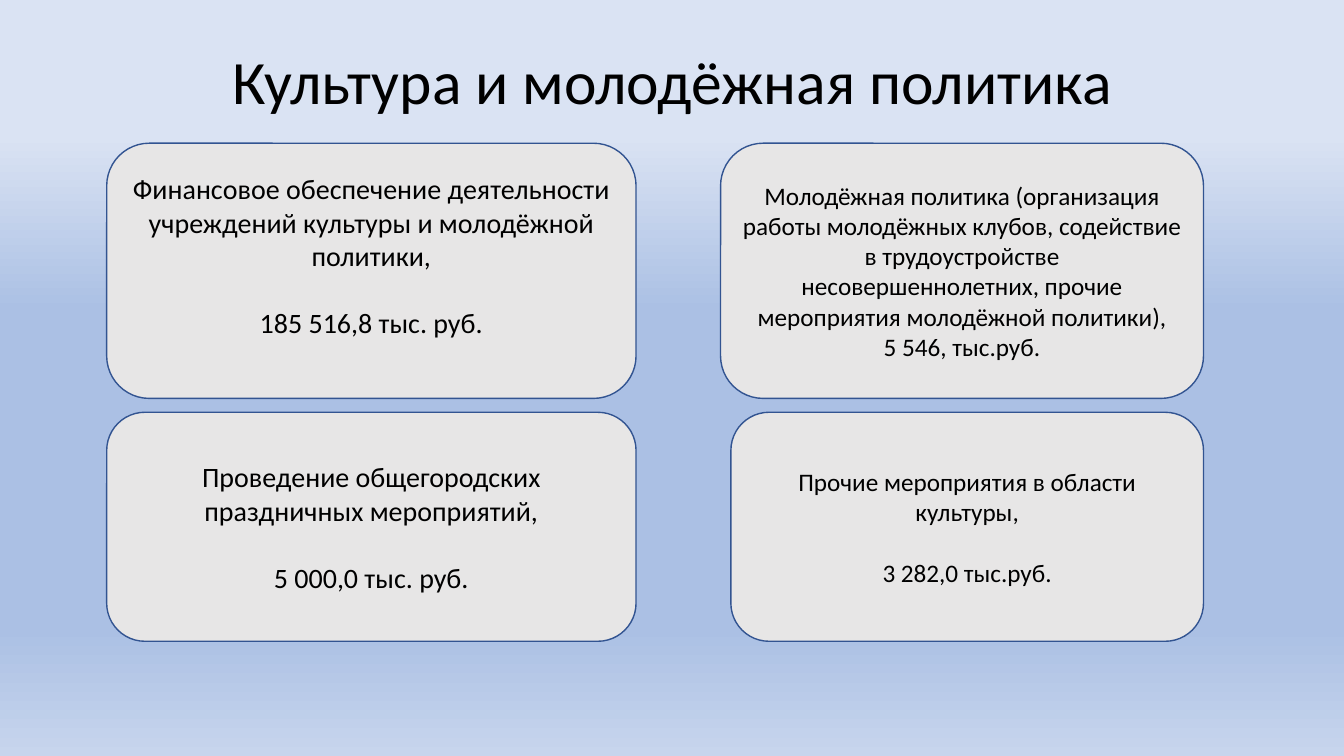
from dataclasses import dataclass

from lxml import etree
from pptx import Presentation
from pptx.dml.color import RGBColor
from pptx.enum.shapes import MSO_SHAPE
from pptx.enum.text import MSO_ANCHOR, MSO_AUTO_SIZE, PP_ALIGN
from pptx.oxml.ns import qn
from pptx.slide import Slide
from pptx.text.text import _Paragraph as Paragraph
from pptx.util import Cm, Pt

ROUNDED = MSO_SHAPE.ROUNDED_RECTANGLE
MIDDLE = MSO_ANCHOR.MIDDLE
CENTER = PP_ALIGN.CENTER
NO_AUTOFIT = MSO_AUTO_SIZE.NONE
TITLE_ONLY = 5
LINE_HEIGHT = 1.22


@dataclass(frozen=True)
class Theme:
    font: str = "Calibri"
    text: str = "000000"
    card_fill: str = "E7E6E6"
    card_line: str = "325491"
    gradient: tuple[tuple[int, str], ...] = (
        (18, "DAE3F3"), (41, "ABC0E4"), (83, "ABC0E4"), (100, "C7D5ED"))
    title_size: int = 44
    large: int = 20
    small: int = 18


@dataclass(frozen=True)
class Row:
    top: float
    height: float


@dataclass(frozen=True)
class Card:
    row: Row
    left: float
    right: float
    size: int
    purpose: str
    amount: str
    gap_lines: int = 1
    bottom_margin: float = 0.13


THEME = Theme()
UPPER = Row(3.61, 6.43)
LOWER = Row(10.39, 5.77)
LEFT_EDGE, LEFT_END, RIGHT_EDGE = 2.69, 16.03, 30.33

CARDS = (
    Card(UPPER, LEFT_EDGE, LEFT_END, THEME.large,
         "Финансовое обеспечение деятельности учреждений культуры и молодёжной политики,",
         "185 516,8 тыс. руб.", bottom_margin=0.9),
    Card(UPPER, 18.16, RIGHT_EDGE, THEME.small,
         "Молодёжная политика (организация работы молодёжных клубов, содействие в "
         "трудоустройстве несовершеннолетних, прочие мероприятия молодёжной политики),",
         "5 546, тыс.руб.", gap_lines=0),
    Card(LOWER, LEFT_EDGE, LEFT_END, THEME.large,
         "Проведение общегородских праздничных мероприятий,", "5 000,0 тыс. руб."),
    Card(LOWER, 18.42, RIGHT_EDGE, THEME.small,
         "Прочие мероприятия в области культуры,", "3 282,0 тыс.руб."),
)


def format_paragraph(para: Paragraph, size: int) -> None:
    para.alignment = CENTER
    for span in para.runs:
        span.font.name = THEME.font
        span.font.size = Pt(size)
        span.font.color.rgb = RGBColor.from_string(THEME.text)


def paint_background(page: Slide) -> None:
    fill = page.background.fill
    fill.gradient()
    fill.gradient_angle = 270
    stops = page.element.find(".//" + qn("a:gsLst"))
    for stop in list(stops):
        stops.remove(stop)
    for percent, color in THEME.gradient:
        stop = etree.SubElement(stops, qn("a:gs"), pos=str(percent * 1000))
        etree.SubElement(stop, qn("a:srgbClr"), val=color)


def add_title(page: Slide, text: str) -> None:
    title = page.shapes.title
    title.left, title.top = Cm(2.34), Cm(1.02)
    title.width, title.height = Cm(29.21), Cm(2.24)
    frame = title.text_frame
    frame.text = text
    frame.word_wrap = True
    frame.auto_size = NO_AUTOFIT
    frame.vertical_anchor = MIDDLE
    para = frame.paragraphs[0]
    para.line_spacing = 0.9
    format_paragraph(para, THEME.title_size)


def add_card(page: Slide, card: Card) -> None:
    box = page.shapes.add_shape(
        ROUNDED, Cm(card.left), Cm(card.row.top),
        Cm(card.right - card.left), Cm(card.row.height))
    box.shadow.inherit = False
    box.fill.solid()
    box.fill.fore_color.rgb = RGBColor.from_string(THEME.card_fill)
    box.line.color.rgb = RGBColor.from_string(THEME.card_line)
    box.line.width = Pt(1)
    frame = box.text_frame
    frame.word_wrap = True
    frame.vertical_anchor = MIDDLE
    frame.margin_bottom = Cm(card.bottom_margin)
    frame.text = card.purpose
    amount = frame.add_paragraph()
    amount.text = card.amount
    amount.space_before = Pt(round(card.gap_lines * card.size * LINE_HEIGHT))
    for para in frame.paragraphs:
        format_paragraph(para, card.size)


def main() -> None:
    deck = Presentation()
    deck.slide_width, deck.slide_height = Cm(33.87), Cm(19.05)
    page = deck.slides.add_slide(deck.slide_layouts[TITLE_ONLY])
    paint_background(page)
    add_title(page, "Культура и молодёжная политика")
    for card in CARDS:
        add_card(page, card)
    deck.save("out.pptx")


if __name__ == "__main__":
    main()
